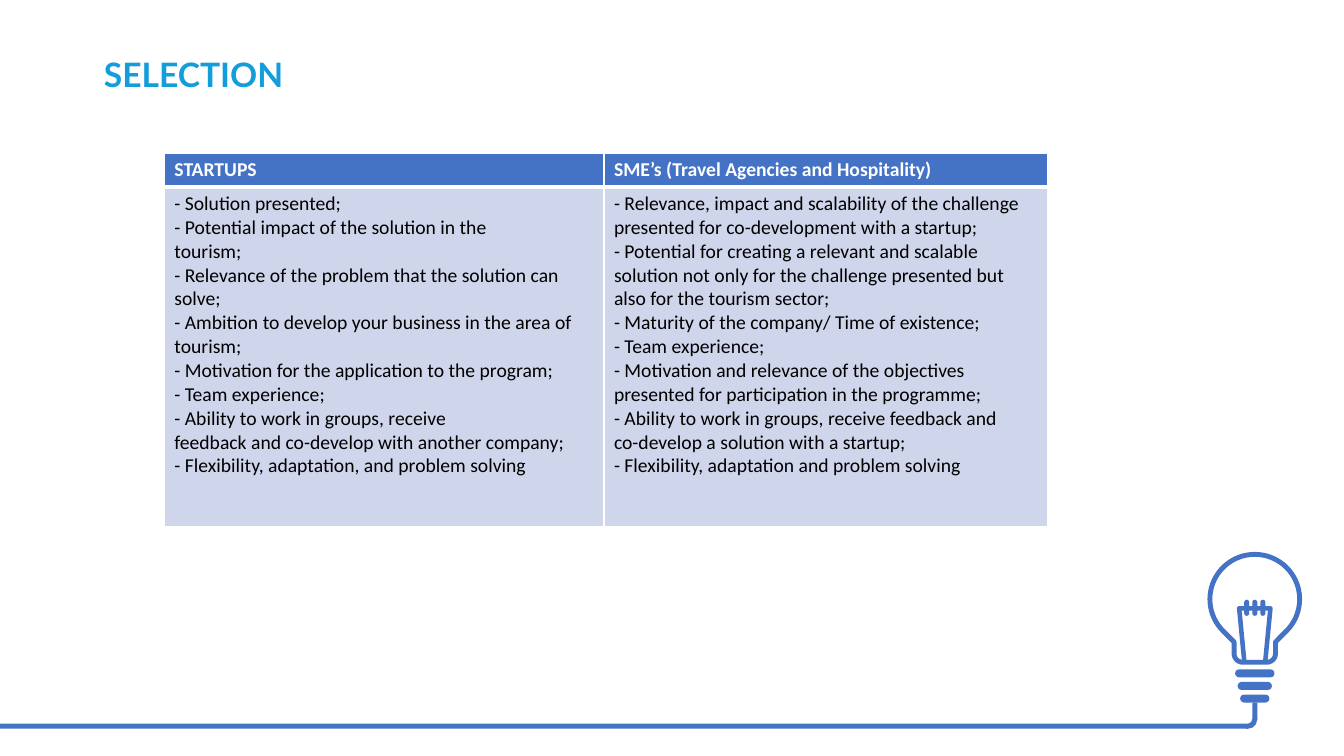
import math
from lxml import etree
from pptx import Presentation
from pptx import util as u
from pptx.dml.color import RGBColor
from pptx.enum import shapes, text
from pptx.oxml.ns import qn

BLUE = RGBColor(0x44, 0x72, 0xC4)
SKY = RGBColor(0x14, 0x9D, 0xDB)
PALE = RGBColor(0xCF, 0xD5, 0xEA)
WHITE = RGBColor(0xFF, 0xFF, 0xFF)
BLACK = RGBColor(0, 0, 0)

# The slide is a grid of 1333 columns by 750 rows
CELL = u.Inches(0.01)
COLS, ROWS = 1333, 750


def write(tf, lines, size=14, font="Calibri", color=BLACK, bold=False):
    """Write one paragraph per line; a vertical tab breaks inside a paragraph."""
    for i, line in enumerate(lines):
        p = tf.paragraphs[0] if i == 0 else tf.add_paragraph()
        p.text = line
        p.alignment = text.PP_ALIGN.LEFT
        for r in p.runs:
            r.font.size, r.font.name = u.Pt(size), font
            r.font.color.rgb, r.font.bold = color, bold


def add_part(kind, *box):
    """Add a solid blue shape; box is left, top, width, height in cells."""
    sp = s.shapes.add_shape(kind, *(round(n * CELL) for n in box))
    sp.shadow.inherit = False
    sp.fill.solid()
    sp.fill.fore_color.rgb = BLUE
    sp.line.fill.background()
    return sp


prs = Presentation()
prs.slide_width, prs.slide_height = COLS * CELL, ROWS * CELL
s = prs.slides.add_slide(prs.slide_layouts[5])

# Title
title = s.shapes.title
title.left, title.top, title.width, title.height = (n * CELL for n in (93, 48, 821, 50))
title.text_frame.word_wrap = True
title.text_frame.auto_size = text.MSO_AUTO_SIZE.SHAPE_TO_FIT_TEXT
write(title.text_frame, ["SELECTION"], size=24, font="Lato", color=SKY, bold=True)

# Selection criteria
criteria = {
    "STARTUPS": [
        "- Solution presented;",
        "- Potential impact of the solution in the\vtourism;",
        "- Relevance of the problem that the solution can solve;",
        "- Ambition to develop your business in the area of tourism;",
        "- Motivation for the application to the program;",
        "- Team experience;",
        "- Ability to work in groups, receive\vfeedback and co-develop with another company;",
        "- Flexibility, adaptation, and problem solving",
    ],
    "SME’s (Travel Agencies and Hospitality)": [
        "- Relevance, impact and scalability of the challenge presented for "
        "co-development with a startup;",
        "- Potential for creating a relevant and scalable solution not only for "
        "the challenge presented but also for the tourism sector;",
        "- Maturity of the company/ Time of existence;",
        "- Team experience;",
        "- Motivation and relevance of the objectives presented for participation "
        "in the programme;",
        "- Ability to work in groups, receive feedback and\v"
        "co-develop a solution with a startup;",
        "- Flexibility, adaptation and problem solving",
    ],
}
col_widths, row_heights = (436, 440), (33, 337)
table = s.shapes.add_table(2, 2, 163 * CELL, 152 * CELL,
                           sum(col_widths) * CELL, sum(row_heights) * CELL).table
for row, height in zip(table.rows, row_heights):
    row.height = height * CELL
for c, (heading, items) in enumerate(criteria.items()):
    table.columns[c].width = col_widths[c] * CELL
    for r, (lines, fill, color) in enumerate([([heading], BLUE, WHITE),
                                              (items, PALE, BLACK)]):
        cell = table.cell(r, c)
        # White borders, heavier between heading and body
        for side in ("lnL", "lnR", "lnT", "lnB"):
            divider = (r, side) in ((0, "lnB"), (1, "lnT"))
            ln = etree.SubElement(cell._tc.get_or_add_tcPr(), qn("a:" + side),
                                  w=str(u.Pt(3 if divider else 1)))
            solid = etree.SubElement(ln, qn("a:solidFill"))
            etree.SubElement(solid, qn("a:srgbClr"), val=str(WHITE))
        cell.fill.solid()
        cell.fill.fore_color.rgb = fill
        write(cell.text_frame, lines, color=color, bold=r == 0)

# Light bulb: glass and filament, mirrored about the bulb's axis
AXIS, GLASS_Y, RADIUS = 1244.5, 594.5, 44.5
NECK, NECK_END, CORNER = 20.5, 657, 8.5


def_arc = [(AXIS, GLASS_Y, RADIUS, 135, 405),
           (AXIS + NECK - CORNER, NECK_END - CORNER, CORNER, 0, 90),
           (AXIS - NECK + CORNER, NECK_END - CORNER, CORNER, 90, 180)]
arcs = [[(x + rad * math.cos(math.radians(a)), y + rad * math.sin(math.radians(a)))
         for a in range(start, end + 1, 5)] for x, y, rad, start, end in def_arc]
glass = (arcs[0] + [(AXIS + NECK, 637)] + arcs[1] + arcs[2] + [(AXIS - NECK, 637)])
filament = [(AXIS + dx, y) for dx, y in
            [(-10.5, 655), (-15.5, 603.5), (15.5, 603.5), (10.5, 655)]]
for points, closed, width in ((glass, True, 3.5), (filament, False, 3.25)):
    (x0, y0), *rest = [(x * CELL, y * CELL) for x, y in points]
    outline = s.shapes.build_freeform(x0, y0)
    outline.add_line_segments(rest, close=closed)
    sp = outline.convert_to_shape()
    sp.shadow.inherit = False
    sp.line.color.rgb = BLUE
    sp.line.width = u.Pt(width)
    if closed:
        sp.fill.solid()
        sp.fill.fore_color.rgb = WHITE
    else:
        sp.fill.background()

# Filament pins and screw base: fully rounded bars centred on the axis
pins = [(AXIS + dx, 595, 5, 16) for dx in (-8, 0, 8)]
base = [(AXIS, 664 + 12.5 * i, 39 - 5 * i, 8) for i in range(3)]
for x, y, w, h in pins + base:
    bar = add_part(shapes.MSO_SHAPE.ROUNDED_RECTANGLE, x - w / 2, y, w, h)
    bar.adjustments[0] = 0.5

# Cable along the foot of the slide
add_part(shapes.MSO_SHAPE.RECTANGLE, 0, 718, 1237, 5)
add_part(shapes.MSO_SHAPE.RECTANGLE, 1242, 697, 5, 17)
bend = add_part(shapes.MSO_SHAPE.BLOCK_ARC, 1228, 704, 19, 19)
for i, value in enumerate((213.39, 60.92, 0.27)):
    bend.adjustments[i] = value

prs.save("out.pptx")
